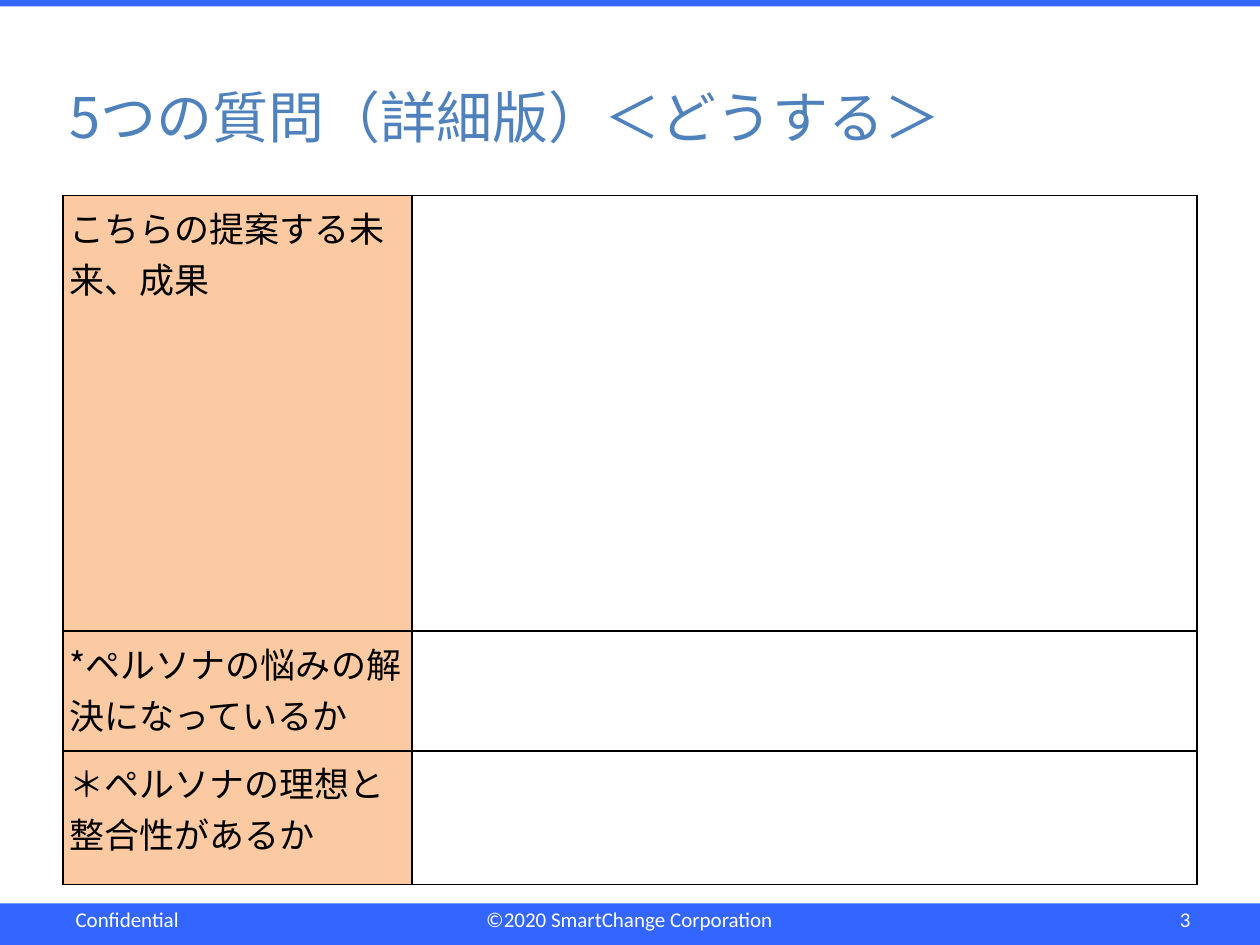
from lxml.etree import SubElement
from pptx import Presentation
from pptx.dml.color import RGBColor
from pptx.enum.shapes import MSO_SHAPE
from pptx.enum.text import MSO_ANCHOR, PP_ALIGN
from pptx.oxml import parse_xml
from pptx.oxml.ns import nsdecls, qn
from pptx.util import Inches, Pt

COLORS = {
    "bar": "3366FF",
    "title": "4F81BD",
    "label": "FBCAA2",
    "white": "FFFFFF",
    "black": "000000",
}
JAPANESE = "Noto Sans CJK JP"
INSET = Inches(0.05)


class SlideBuilder:
    """Holds the slide being built and its shared style."""

    def __init__(self, slide):
        self.slide = slide

    def color(self, name):
        return RGBColor.from_string(COLORS[name])

    def style_text(self, text_frame, font, size, color, align=PP_ALIGN.LEFT):
        for paragraph in text_frame.paragraphs:
            paragraph.alignment = align
            for run in paragraph.runs:
                run.font.name = font
                run.font.size = Pt(size)
                run.font.color.rgb = self.color(color)
                SubElement(run.font._element, qn("a:ea"), typeface=JAPANESE)

    def set_insets(self, target):
        target.margin_left = target.margin_right = INSET
        target.margin_top = target.margin_bottom = INSET

    def bar(self, top, height):
        shape = self.slide.shapes.add_shape(
            MSO_SHAPE.RECTANGLE, 0, Inches(top), Inches(10), Inches(height))
        shape.shadow.inherit = False
        shape.fill.solid()
        shape.fill.fore_color.rgb = self.color("bar")
        shape.line.fill.background()

    def title(self, text):
        shape = self.slide.shapes.title
        shape.left, shape.top = Inches(0.5), Inches(0.3)
        shape.width, shape.height = Inches(9), Inches(1.25)
        text_frame = shape.text_frame
        text_frame.text = text
        text_frame.vertical_anchor = MSO_ANCHOR.MIDDLE
        self.set_insets(text_frame)
        self.style_text(text_frame, JAPANESE, 32, "title")

    def footer(self, text, left, width, align, wrap=True):
        shape = self.slide.shapes.add_textbox(
            Inches(left), Inches(7.15), Inches(width), Inches(0.29))
        text_frame = shape.text_frame
        text_frame.text = text
        text_frame.word_wrap = wrap
        text_frame.vertical_anchor = MSO_ANCHOR.MIDDLE
        self.set_insets(text_frame)
        self.style_text(text_frame, "Calibri", 12, "white", align)

    def cell(self, cell, fill):
        """Fill a table cell and draw a thin line on all four sides."""
        self.set_insets(cell)
        cell.fill.solid()
        cell.fill.fore_color.rgb = self.color(fill)
        properties = cell._tc.get_or_add_tcPr()
        for position, side in enumerate(("lnL", "lnR", "lnT", "lnB")):
            properties.insert(position, parse_xml(
                f'<a:{side} {nsdecls("a")} w="{Pt(1)}"><a:solidFill>'
                f'<a:srgbClr val="{COLORS["black"]}"/></a:solidFill></a:{side}>'))

    def question_table(self, rows, column_widths):
        """Draw label and answer columns; rows are (label, font, height)."""
        height = sum(row[2] for row in rows)
        table = self.slide.shapes.add_table(
            len(rows), len(column_widths), Inches(0.5), Inches(1.55),
            Inches(sum(column_widths)), Inches(height)).table
        table.first_row = table.horz_banding = False
        for column, width in zip(table.columns, column_widths):
            column.width = Inches(width)
        for row, (label, font, row_height) in zip(table.rows, rows):
            row.height = Inches(row_height)
            label_cell, answer_cell = row.cells
            label_cell.text_frame.text = label
            self.style_text(label_cell.text_frame, font, 20, "black")
            self.cell(label_cell, "label")
            self.cell(answer_cell, "white")


def main():
    presentation = Presentation()
    presentation.slide_width, presentation.slide_height = Inches(10), Inches(7.5)
    layout = presentation.slide_layouts.get_by_name("Title Only")
    builder = SlideBuilder(presentation.slides.add_slide(layout))

    builder.bar(7.17, 0.33)
    builder.bar(0, 0.05)
    builder.footer("©︎2020 SmartChange Corporation", 2.88, 4.23, PP_ALIGN.CENTER)
    builder.footer("Confidential", 0.55, 2.23, PP_ALIGN.LEFT)
    builder.title("5つの質問（詳細版）＜どうする＞")
    builder.question_table(
        [
            ("こちらの提案する未来、成果", "Arial", 3.46),
            ("*ペルソナの悩みの解決になっているか", JAPANESE, 0.95),
            ("＊ペルソナの理想と整合性があるか", JAPANESE, 1.06),
        ],
        column_widths=[2.77, 6.23],
    )
    builder.footer("3", 9.3, 0.2, PP_ALIGN.RIGHT, wrap=False)
    presentation.save("out.pptx")


if __name__ == "__main__":
    main()
